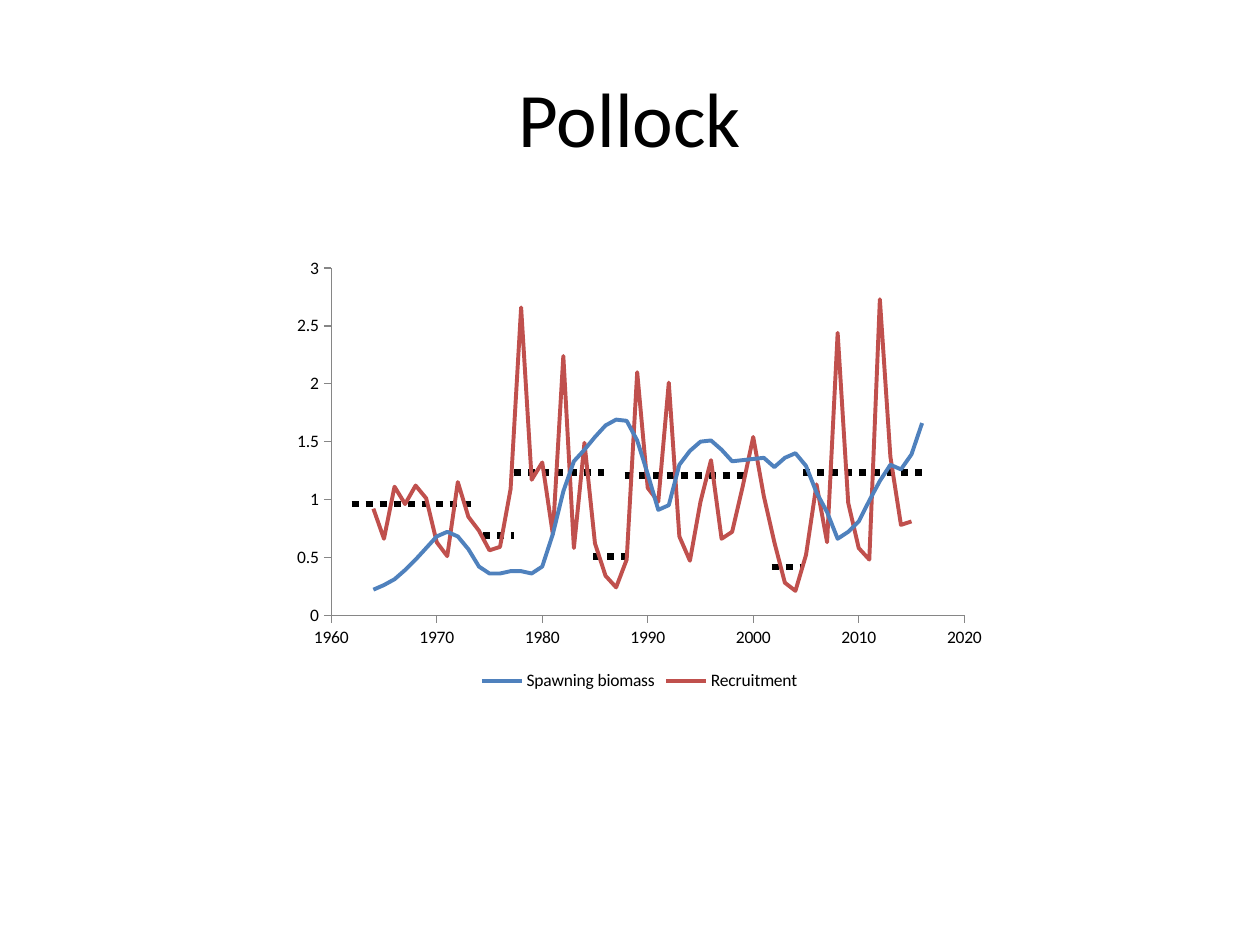
from lxml.etree import SubElement
from pptx import Presentation
from pptx.chart.data import XyChartData
from pptx.dml.color import RGBColor
from pptx.enum.chart import XL_CHART_TYPE as ChartType
from pptx.enum.chart import XL_LEGEND_POSITION as LegendPosition
from pptx.enum.chart import XL_TICK_MARK as TickMark
from pptx.enum.dml import MSO_LINE_DASH_STYLE as Dash
from pptx.enum.shapes import MSO_CONNECTOR as Connector
from pptx.enum.text import MSO_ANCHOR as Anchor
from pptx.enum.text import PP_ALIGN as Align
from pptx.oxml.ns import qn
from pptx.util import Pt

FONT = "Calibri"
FIRST_YEAR = 1964
SPAWNING_BIOMASS = [
    0.22, 0.26, 0.31, 0.39, 0.48, 0.58, 0.68, 0.72, 0.68, 0.57, 0.42,
    0.36, 0.36, 0.38, 0.38, 0.36, 0.42, 0.7, 1.07, 1.33, 1.43, 1.54,
    1.64, 1.69, 1.68, 1.51, 1.22, 0.91, 0.95, 1.3, 1.42, 1.5, 1.51,
    1.43, 1.33, 1.34, 1.35, 1.36, 1.28, 1.36, 1.4, 1.29, 1.06, 0.89,
    0.66, 0.72, 0.81, 0.99, 1.16, 1.3, 1.26, 1.39, 1.66,
]
RECRUITMENT = [
    0.92, 0.66, 1.11, 0.96, 1.12, 1.01, 0.63, 0.51, 1.15, 0.85, 0.73,
    0.56, 0.59, 1.09, 2.66, 1.17, 1.32, 0.7, 2.24, 0.58, 1.49, 0.62,
    0.34, 0.24, 0.48, 2.1, 1.1, 0.98, 2.01, 0.68, 0.47, 0.98, 1.34,
    0.66, 0.72, 1.11, 1.54, 1.03, 0.63, 0.28, 0.21, 0.52, 1.13, 0.63,
    2.44, 0.97, 0.58, 0.48, 2.73, 1.37, 0.78, 0.81,
]
SERIES = [
    ("Spawning biomass", SPAWNING_BIOMASS, "4F81BD"),
    ("Recruitment", RECRUITMENT, "C0504D"),
]
# Mean recruitment of each period: left, right, height on the page
PERIOD_MEANS = [
    (201, 270, 288), (294, 345, 270), (357, 426, 271.5), (459, 528, 270),
    (339, 357, 318), (441, 459, 324), (276, 294, 306),
]


def color(hex_code):
    return RGBColor.from_string(hex_code)


def add_title(page, text):
    box = page.shapes.add_textbox(Pt(36), Pt(21.6), Pt(648), Pt(90))
    frame = box.text_frame
    frame.word_wrap = True
    frame.vertical_anchor = Anchor.MIDDLE
    frame.text = text
    para = frame.paragraphs[0]
    para.alignment = Align.CENTER
    font = para.runs[0].font
    font.name, font.size = FONT, Pt(44)
    font.color.rgb = color("000000")


def add_mean_line(page, left, right, y):
    connector = page.shapes.add_connector(
        Connector.STRAIGHT, Pt(left), Pt(y), Pt(right), Pt(y))
    line = connector.line
    line.color.rgb = color("000000")
    line.width = Pt(4)
    line.dash_style = Dash.ROUND_DOT  # stored as sysDot
    SubElement(connector._element.spPr, qn("a:effectLst"))


def style_axis(axis, top, bottom, step):
    axis.minimum_scale, axis.maximum_scale = bottom, top
    axis.major_unit = step
    axis.has_major_gridlines = False
    axis.major_tick_mark = TickMark.OUTSIDE
    axis.minor_tick_mark = TickMark.NONE
    axis.tick_labels.number_format = "General"
    axis.tick_labels.number_format_is_linked = False
    axis.format.line.color.rgb = color("868686")
    axis.format.line.width = Pt(0.75)


def place_plot(plot_area, **fractions):
    """Fix the inner plot area as fractions of the chart frame."""
    layout = plot_area.find(qn("c:layout"))
    if layout is None:
        layout = SubElement(plot_area, qn("c:layout"))
        plot_area.insert(0, layout)
    manual = SubElement(layout, qn("c:manualLayout"))
    settings = {"layoutTarget": "inner", "xMode": "edge", "yMode": "edge"}
    for tag, value in {**settings, **fractions}.items():
        SubElement(manual, qn("c:" + tag)).set("val", str(value))


def clear_backgrounds(chart_space, plot_area):
    """Leave the lines behind the chart visible."""
    for parent in (chart_space, plot_area):
        properties = SubElement(parent, qn("c:spPr"))
        SubElement(properties, qn("a:noFill"))
        SubElement(SubElement(properties, qn("a:ln")), qn("a:noFill"))
        if parent is chart_space:
            parent.find(qn("c:chart")).addnext(properties)


def add_stock_chart(page):
    data = XyChartData()
    for name, values, _ in SERIES:
        series = data.add_series(name)
        for year, value in enumerate(values, FIRST_YEAR):
            series.add_data_point(year, value)
    chart = page.shapes.add_chart(
        ChartType.XY_SCATTER_LINES_NO_MARKERS,
        Pt(162), Pt(142.5), Pt(407), Pt(255), data).chart
    chart.has_title = False
    chart.font.name, chart.font.size = FONT, Pt(10)
    chart.font.color.rgb = color("000000")
    chart.has_legend = True
    chart.legend.position = LegendPosition.BOTTOM
    chart.legend.include_in_layout = False
    style_axis(chart.category_axis, 2020, 1960, 10)
    style_axis(chart.value_axis, 3, 0, 0.5)
    plot = chart.plots[0]
    plot.vary_by_categories = False
    for series, (_, _, hex_code) in zip(plot.series, SERIES):
        series.smooth = False
        series.format.line.color.rgb = color(hex_code)
        series.format.line.width = Pt(2.25)
    chart_space = chart._chartSpace
    plot_area = chart_space.chart.plotArea
    place_plot(plot_area, x=0.067, y=0.042, w=0.889, h=0.778)
    clear_backgrounds(chart_space, plot_area)


def main():
    deck = Presentation()
    deck.slide_width, deck.slide_height = Pt(720), Pt(540)
    page = deck.slides.add_slide(deck.slide_layouts[6])
    add_title(page, "Pollock")
    for left, right, y in PERIOD_MEANS:
        add_mean_line(page, left, right, y)
    add_stock_chart(page)
    deck.save("out.pptx")


if __name__ == "__main__":
    main()
